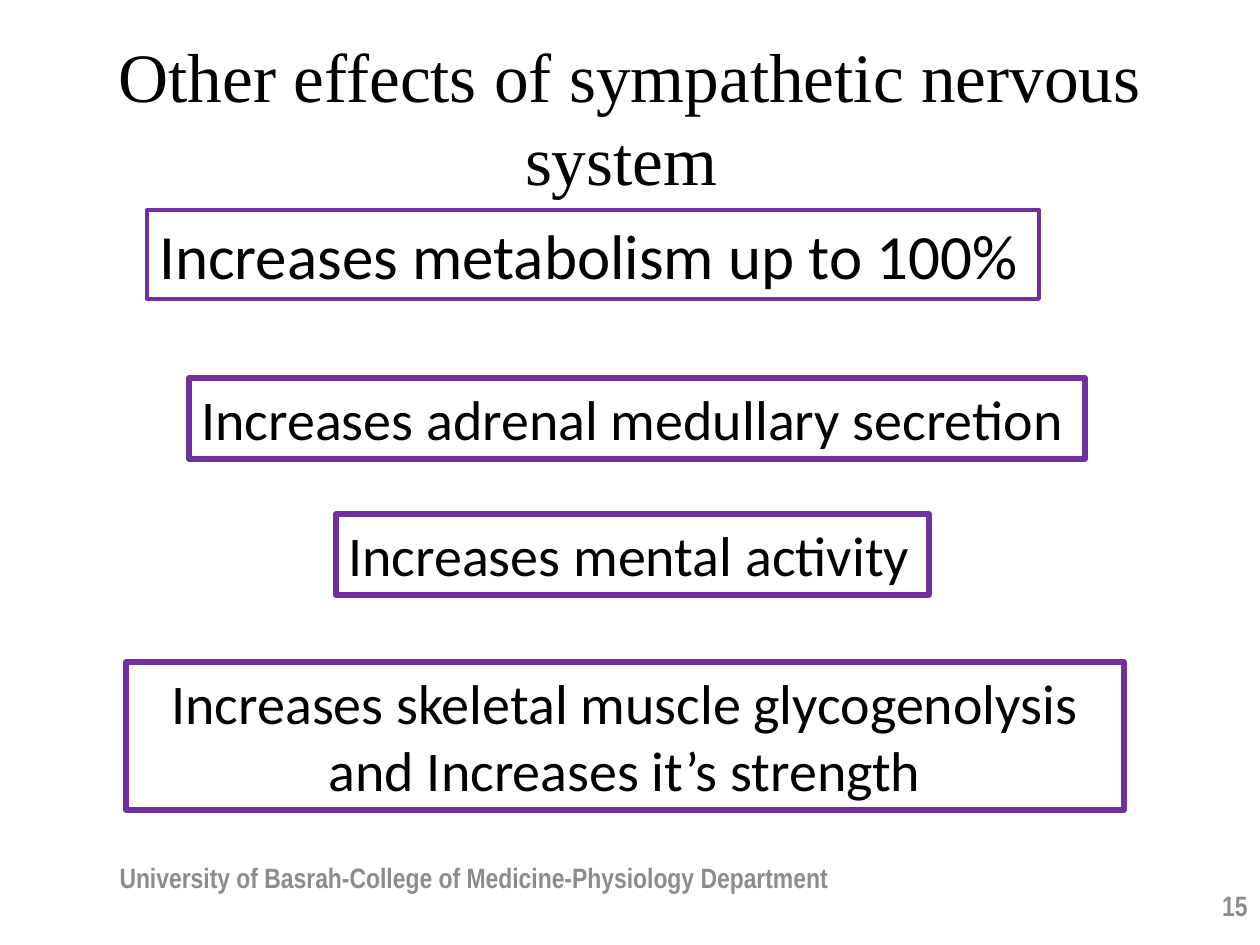
"""Build the slide on other effects of the sympathetic nervous system."""
from pptx import Presentation
from pptx.dml.color import RGBColor
from pptx.enum.text import MSO_ANCHOR, MSO_AUTO_SIZE, PP_ALIGN
from pptx.util import Emu, Pt

PX = 914400 // 126
COLORS = {"text": "000000", "border": "7030A0", "paper": "FFFFFF", "footer": "8C8C8C"}

TITLE = ("Other effects of sympathetic nervous system ", (63, 38, 1134, 157))
EFFECTS = [
    {"text": "Increases metabolism up to 100%", "area": (147, 210, 892, 89),
     "size": 36, "border": 2.25, "fill": "paper"},
    {"text": "Increases adrenal medullary secretion", "area": (189, 378, 896, 81)},
    {"text": "Increases mental activity", "area": (336, 514, 593, 81)},
    {"text": "Increases skeletal muscle glycogenolysis and Increases it’s strength",
     "area": (126, 662, 998, 148), "wrap": True, "align": PP_ALIGN.CENTER},
]
FOOTERS = [
    ("University of Basrah-College of Medicine-Physiology Department",
     (71, 852, 806, 50), PP_ALIGN.CENTER),
    ("15", (959, 880, 301, 50), PP_ALIGN.RIGHT),
]


def color(name):
    return RGBColor.from_string(COLORS[name])


def add_text(page, text, area, font, size, align, ink="text", bold=False,
             anchor=MSO_ANCHOR.MIDDLE, wrap=True):
    box = page.shapes.add_textbox(*(Emu(length * PX) for length in area))
    frame = box.text_frame
    frame.word_wrap = wrap
    frame.vertical_anchor = anchor
    para = frame.paragraphs[0]
    para.alignment = align
    span = para.add_run()
    span.text = text
    span.font.name = font
    span.font.size = Pt(size)
    span.font.bold = bold
    span.font.color.rgb = color(ink)
    return box


def add_effect(page, text, area, size=32, border=3, fill=None, wrap=False,
               align=PP_ALIGN.LEFT):
    box = add_text(page, text, area, "Calibri", size, align,
                   anchor=MSO_ANCHOR.TOP, wrap=wrap)
    box.text_frame.auto_size = MSO_AUTO_SIZE.SHAPE_TO_FIT_TEXT
    box.line.color.rgb = color("border")
    box.line.width = Pt(border)
    if fill:
        box.fill.solid()
        box.fill.fore_color.rgb = color(fill)


def main():
    deck = Presentation()
    deck.slide_width, deck.slide_height = Emu(1260 * PX), Emu(945 * PX)
    page = deck.slides.add_slide(deck.slide_layouts[6])
    add_text(page, *TITLE, "Times New Roman", 39.6, PP_ALIGN.CENTER)
    for effect in EFFECTS:
        add_effect(page, **effect)
    for text, area, align in FOOTERS:
        add_text(page, text, area, "Arial Narrow", 16, align, "footer", bold=True)
    deck.save("out.pptx")


if __name__ == "__main__":
    main()
